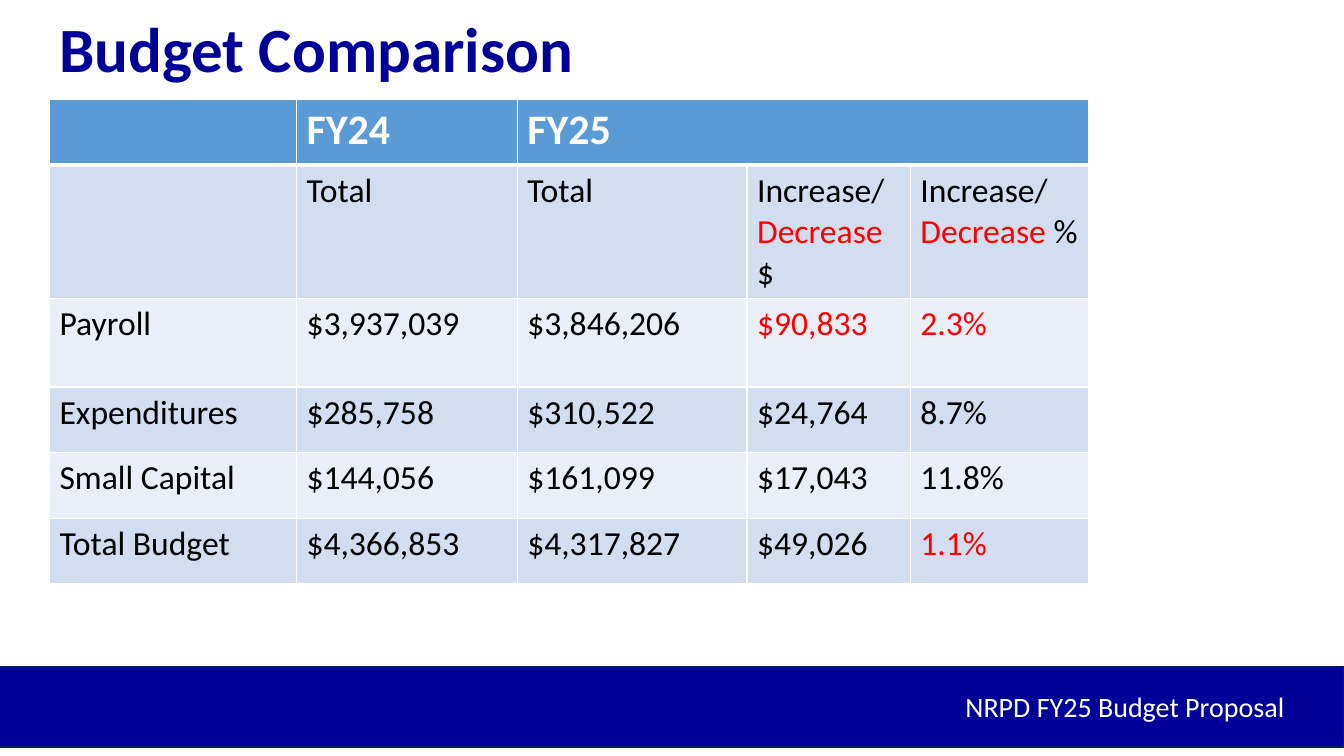
import pptx
import pptx.dml.color
import pptx.enum.shapes
import pptx.enum.text
import pptx.oxml.ns
import pptx.util
from lxml import etree

COLOURS = {
    "navy": "000099", "edge": "002060", "white": "FFFFFF", "black": "000000",
    "red": "FF0000", "header": "5B9BD5", "dark band": "D2DEEF", "light band": "EAEFF7",
}
# Text between bars is red; \v breaks the line.
BUDGET = [
    ["", "FY24", "FY25", "", ""],
    ["", "Total", "Total", "Increase/\v|Decrease| $", "Increase/\v|Decrease| %"],
    ["Payroll", "$3,937,039", "$3,846,206", "|$90,833|", "|2.3%|"],
    ["Expenditures", "$285,758", "$310,522", "$24,764", "8.7%"],
    ["Small Capital", "$144,056", "$161,099", "$17,043", "11.8%"],
    ["Total Budget", "$4,366,853", "$4,317,827", "$49,026", "|1.1%|"],
]
# Percentages of the slide's width and height.
LEFT = 3.68
COLUMN_WIDTHS = [18.38, 16.43, 17.1, 12.15, 13.28]
ROW_HEIGHTS = [8.67, 15.07, 11.73, 8.67, 8.67, 8.67]


def colour(name):
    return pptx.dml.color.RGBColor.from_string(COLOURS[name])


class BudgetPage:
    font = "Calibri"
    align = pptx.enum.text.PP_ALIGN

    def __init__(self, deck):
        self.deck = deck
        self.page = deck.slides.add_slide(deck.slide_layouts[5])

    def across(self, percent):
        return round(self.deck.slide_width * percent / 100)

    def down(self, percent):
        return round(self.deck.slide_height * percent / 100)

    def area(self, left, top, width, height):
        return self.across(left), self.down(top), self.across(width), self.down(height)

    def style(self, span, size, ink, bold=False):
        span.font.name = self.font
        span.font.size = pptx.util.Pt(size)
        span.font.bold = bold
        span.font.color.rgb = colour(ink)

    def set_text(self, box, text, size, ink, bold, align):
        frame = box.text_frame
        frame.text = text
        frame.word_wrap = True
        frame.auto_size = pptx.enum.text.MSO_AUTO_SIZE.NONE
        frame.vertical_anchor = pptx.enum.text.MSO_ANCHOR.TOP
        para = frame.paragraphs[0]
        para.alignment = align
        self.style(para.runs[0], size, ink, bold)

    def title(self, text, area):
        box = self.page.shapes.title
        box.left, box.top, box.width, box.height = area
        self.set_text(box, text, 45, "navy", True, self.align.LEFT)

    def band(self, area):
        bar = self.page.shapes.add_shape(pptx.enum.shapes.MSO_SHAPE.RECTANGLE, *area)
        bar.shadow.inherit = False
        bar.fill.solid()
        bar.fill.fore_color.rgb = colour("navy")
        bar.line.color.rgb = colour("edge")
        bar.line.width = pptx.util.Pt(1)

    def footer(self, text, area):
        box = self.page.shapes.add_textbox(*area)
        self.set_text(box, text, 20, "white", False, self.align.RIGHT)

    def border(self, cell, bottom):
        """Draw white cell edges; bottom is the lower edge's width in points."""
        properties = cell._tc.get_or_add_tcPr()
        qn = pptx.oxml.ns.qn
        for side, points in (("L", 1), ("R", 1), ("T", 1), ("B", bottom)):
            line = etree.SubElement(properties, qn(f"a:ln{side}"), w=str(pptx.util.Pt(points)))
            fill = etree.SubElement(line, qn("a:solidFill"))
            etree.SubElement(fill, qn("a:srgbClr"), val=COLOURS["white"])

    def cell(self, cell, text, header, fill):
        self.border(cell, 3 if header else 1)
        cell.fill.solid()
        cell.fill.fore_color.rgb = colour(fill)
        para = cell.text_frame.paragraphs[0]
        size, ink = (30, "white") if header else (24, "black")
        for index, part in enumerate(text.split("|")):
            if not part:
                continue
            if index == 0:
                para.text = part
                span = para.runs[0]
            else:
                span = para.add_run()
                span.text = part
            self.style(span, size, "red" if index % 2 else ink, header)

    def table(self, rows, left, top, widths, heights):
        area = self.area(left, top, sum(widths), sum(heights))
        table = self.page.shapes.add_table(len(rows), len(widths), *area).table
        for column, width in zip(table.columns, widths):
            column.width = self.across(width)
        for number, (row, height) in enumerate(zip(rows, heights)):
            table.rows[number].height = self.down(height)
            header = number == 0
            fill = "header" if header else "dark band" if number % 2 else "light band"
            for place, text in enumerate(row):
                self.cell(table.cell(number, place), text, header, fill)
        table.cell(0, 2).merge(table.cell(0, 4))


def main():
    deck = pptx.Presentation()
    deck.slide_width = pptx.util.Inches(13.33)
    deck.slide_height = pptx.util.Inches(7.5)
    page = BudgetPage(deck)
    page.band(page.area(-3.08, 88.13, 103.08, 10.67))
    page.title("Budget Comparison", page.area(LEFT, 0.53, 92.65, 12))
    page.footer("NRPD FY25 Budget Proposal", page.area(46.21, 90.53, 50.11, 9.47))
    page.table(BUDGET, LEFT, 13.2, COLUMN_WIDTHS, ROW_HEIGHTS)
    deck.save("out.pptx")


if __name__ == "__main__":
    main()
